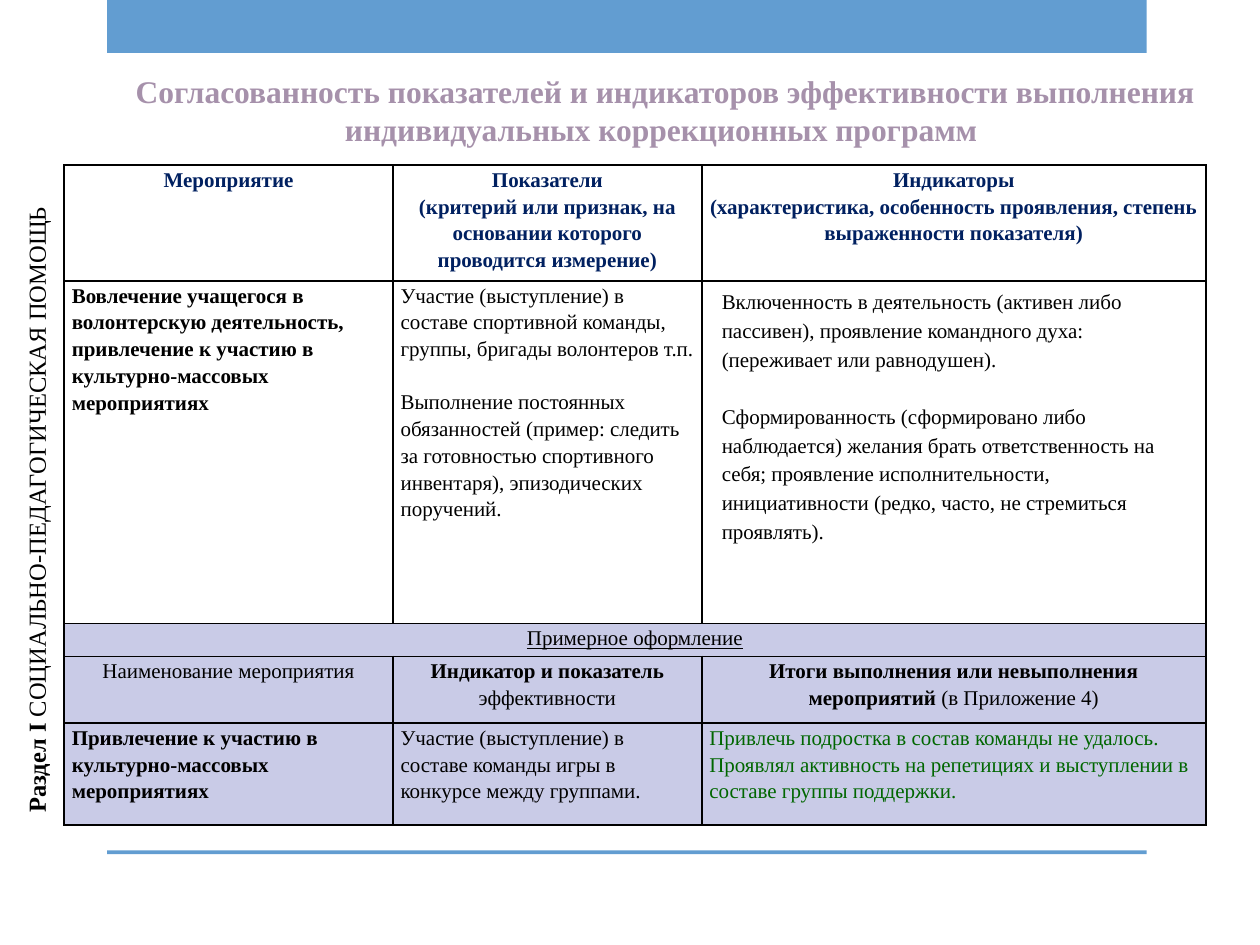
from lxml.etree import SubElement
from pptx import Presentation
from pptx.dml.color import RGBColor
from pptx.enum.shapes import MSO_SHAPE as Shape
from pptx.enum.text import PP_ALIGN as Align
from pptx.oxml.ns import qn
from pptx.util import Inches, Pt

FONT = "Times New Roman"
BLUE = RGBColor(0x62, 0x9D, 0xD1)
MAUVE = RGBColor(0xA6, 0x91, 0xAB)
NAVY = RGBColor(0x00, 0x20, 0x60)
BLACK = RGBColor(0x00, 0x00, 0x00)
GREEN = RGBColor(0x00, 0x66, 0x00)
LILAC = RGBColor(0xC9, 0xCB, 0xE7)

COLUMNS = (2.61, 2.45, 4)
ROWS = (0.92, 2.72, 0.26, 0.53, 0.81)

# Each cell is a list of paragraphs, each paragraph a list of (text, bold)
CELLS = [
    [
        [[("Мероприятие", True)]],
        [[("Показатели", True)],
         [("(критерий или признак, на основании которого проводится измерение)", True)]],
        [[("Индикаторы", True)],
         [("(характеристика, особенность проявления, степень выраженности показателя)", True)]],
    ],
    [
        [[("Вовлечение учащегося в волонтерскую деятельность, привлечение к участию "
           "в культурно-массовых мероприятиях", True)]],
        [[("Участие (выступление) в составе спортивной команды, группы, "
           "бригады волонтеров т.п.", False)],
         [("Выполнение постоянных обязанностей (пример: следить за готовностью "
           "спортивного инвентаря), эпизодических поручений.", False)]],
        [],
    ],
    [[[("Примерное оформление", False)]], [], []],
    [
        [[("Наименование мероприятия", False)]],
        [[("Индикатор и показатель ", True), ("эффективности", False)]],
        [[("Итоги выполнения или невыполнения мероприятий ", True),
          ("(в Приложение 4)", False)]],
    ],
    [
        [[("Привлечение к участию в культурно-массовых мероприятиях", True)]],
        [[("Участие (выступление) в составе команды игры в конкурсе между группами.", False)]],
        [[("Привлечь подростка в состав команды не удалось. Проявлял активность "
           "на репетициях и выступлении в составе группы поддержки.", False)]],
    ],
]
HEADER, ACTIVITY, CAPTION, SUBHEADER, EXAMPLE = range(5)

INDICATORS = [
    ((5.63, 2.21, 3.92, 0.8),
     "Включенность в деятельность (активен либо пассивен), проявление командного "
     "духа: (переживает или равнодушен)."),
    ((5.63, 3.12, 3.78, 1.26),
     "Сформированность (сформировано либо наблюдается) желания брать ответственность "
     "на себя; проявление исполнительности, инициативности (редко, часто, "
     "не стремиться проявлять)."),
]


def write_para(para, spans, size, color, align=Align.LEFT, spacing=None):
    para.alignment = align
    para.line_spacing = spacing
    para.font.name = FONT
    para.font.size = Pt(size)
    para.font.color.rgb = color
    for text, bold in spans:
        span = para.add_run()
        span.text = text
        span.font.bold = bold


def add_text(page, box, spans, size, color, **layout):
    shape = page.shapes.add_textbox(*map(Inches, box))
    shape.text_frame.word_wrap = True
    write_para(shape.text_frame.paragraphs[0], spans, size, color, **layout)
    return shape


def add_bar(page, box):
    bar = page.shapes.add_shape(Shape.RECTANGLE, *map(Inches, box))
    bar.shadow.inherit = False
    bar.fill.solid()
    bar.fill.fore_color.rgb = BLUE
    bar.line.fill.background()


def set_borders(cell):
    props = cell._tc.get_or_add_tcPr()
    for position, side in enumerate(("a:lnL", "a:lnR", "a:lnT", "a:lnB")):
        line = SubElement(props, qn(side), w=str(Pt(1)))
        props.remove(line)
        props.insert(position, line)  # borders come before the fill
        fill = SubElement(line, qn("a:solidFill"))
        SubElement(fill, qn("a:srgbClr"), val=str(BLACK))


def fill_cell(cell, paras, row, column):
    cell.margin_left = cell.margin_right = Inches(0.06)
    cell.margin_top = cell.margin_bottom = 0
    if row >= CAPTION:
        cell.fill.solid()
        cell.fill.fore_color.rgb = LILAC
    else:
        cell.fill.background()
    set_borders(cell)

    color = NAVY if row == HEADER else BLACK
    if (row, column) == (EXAMPLE, 2):
        color = GREEN
    align = Align.CENTER if row in (HEADER, CAPTION, SUBHEADER) else Align.LEFT
    frame = cell.text_frame
    for index, spans in enumerate(paras):
        para = frame.add_paragraph() if index else frame.paragraphs[0]
        write_para(para, spans, 12, color, align, 1.15)
        if row == CAPTION:
            para.runs[0].font.underline = True
        if row == ACTIVITY and index:
            para.space_before = Pt(15)


def add_programme_table(page, box):
    table = page.shapes.add_table(len(ROWS), len(COLUMNS), *map(Inches, box)).table
    for column, width in zip(table.columns, COLUMNS):
        column.width = Inches(width)
    for row, height in zip(table.rows, ROWS):
        row.height = Inches(height)
    for row, contents in enumerate(CELLS):
        for column, paras in enumerate(contents):
            fill_cell(table.cell(row, column), paras, row, column)
    table.cell(CAPTION, 0).merge(table.cell(CAPTION, 2))


def main():
    deck = Presentation()
    deck.slide_width, deck.slide_height = Inches(10), Inches(7.5)
    page = deck.slides.add_slide(deck.slide_layouts[6])

    # Top and bottom bars
    add_bar(page, (0.85, 0, 8.25, 0.42))
    add_bar(page, (0.85, 6.75, 8.25, 0.03))

    # Title
    add_text(page, (0.83, 0.52, 8.9, 0.71),
             [("Согласованность показателей и индикаторов эффективности выполнения "
               "индивидуальных коррекционных программ ", True)],
             18, MAUVE, align=Align.CENTER)

    # Table, with the indicators laid over its empty cell
    add_programme_table(page, (0.51, 1.31, sum(COLUMNS), sum(ROWS)))
    for box, text in INDICATORS:
        add_text(page, box, [(text, False)], 12, BLACK, spacing=1.15)

    # Section name up the left edge
    section = add_text(page, (-2.35, 3.74, 5.28, 0.34),
                       [("Раздел I", True), (" СОЦИАЛЬНО-ПЕДАГОГИЧЕСКАЯ ПОМОЩЬ", False)],
                       14, BLACK)
    section.rotation = 270

    deck.save("out.pptx")


if __name__ == "__main__":
    main()
